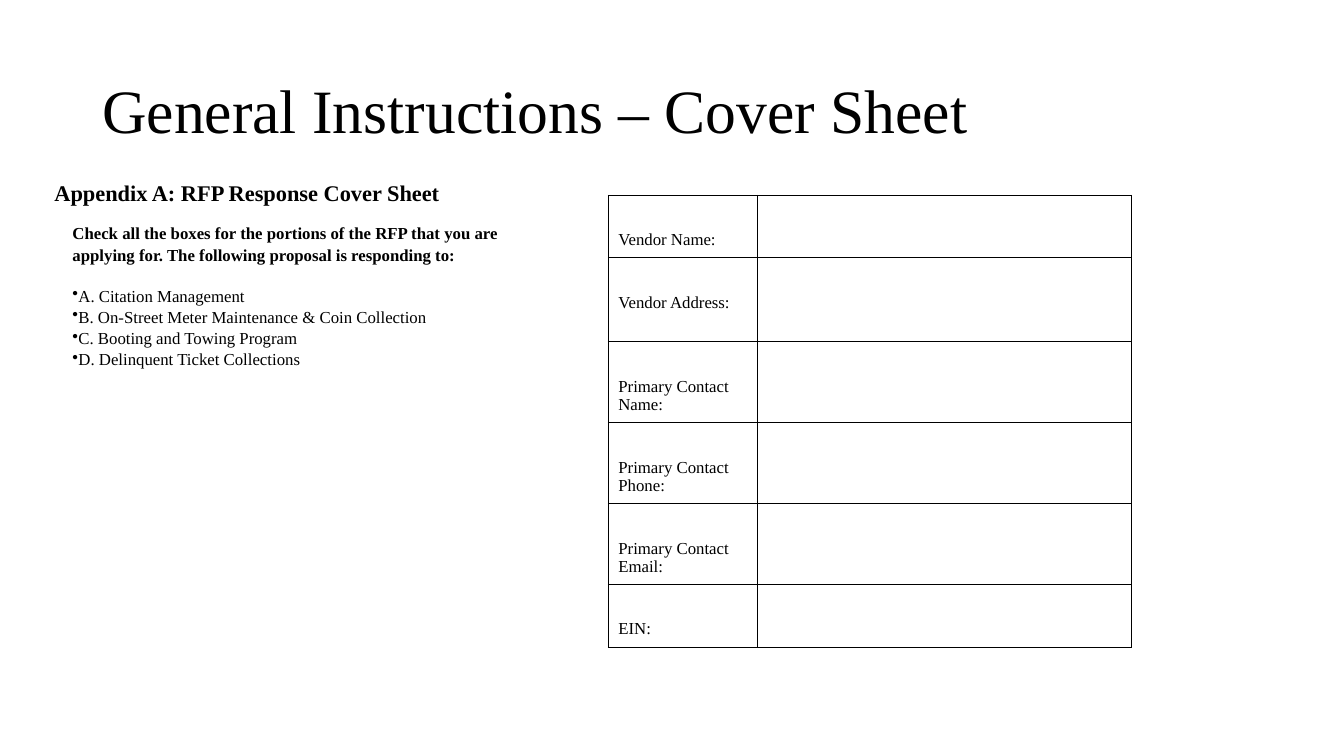
from dataclasses import dataclass

from lxml.etree import SubElement
from pptx import Presentation
from pptx.dml.color import RGBColor
from pptx.enum.shapes import MSO_SHAPE as Shape
from pptx.enum.text import MSO_ANCHOR as Anchor, PP_ALIGN as Align
from pptx.oxml.ns import qn
from pptx.util import Pt


@dataclass(frozen=True)
class Theme:
    font: str = "Times New Roman"
    ink: str = "000000"
    paper: str = "FFFFFF"
    title_size: float = 44
    heading_size: float = 16
    body_size: float = 12
    border_width: float = 0.6


THEME = Theme()
PROPOSAL_PARTS = [
    "A. Citation Management",
    "B. On-Street Meter Maintenance & Coin Collection",
    "C. Booting and Towing Program",
    "D. Delinquent Ticket Collections",
]
VENDOR_FIELDS = [
    ("Vendor Name:", 44.6),
    ("Vendor Address:", 60),
    ("Primary Contact Name:", 56),
    ("Primary Contact Phone:", 56),
    ("Primary Contact Email:", 56),
    ("EIN:", 44.9),
]


def style_paragraph(paragraph, text, size, bold=False):
    paragraph.text = text
    paragraph.alignment = Align.LEFT
    font = paragraph.font
    font.name, font.size, font.bold = THEME.font, Pt(size), bold
    font.color.rgb = RGBColor.from_string(THEME.ink)


def add_title(slide, left, top, width, height):
    box = slide.shapes.add_textbox(Pt(left), Pt(top), Pt(width), Pt(height))
    frame = box.text_frame
    frame.word_wrap = True
    frame.vertical_anchor = Anchor.MIDDLE
    paragraph = frame.paragraphs[0]
    style_paragraph(paragraph, "General Instructions – Cover Sheet", THEME.title_size)
    paragraph.line_spacing = 0.9


def add_panel(slide, left, top, width, height):
    panel = slide.shapes.add_shape(
        Shape.RECTANGLE, Pt(left), Pt(top), Pt(width), Pt(height))
    panel.shadow.inherit = False
    panel.fill.solid()
    panel.fill.fore_color.rgb = RGBColor.from_string(THEME.paper)
    panel.line.fill.background()
    frame = panel.text_frame
    frame.word_wrap = True
    frame.vertical_anchor = Anchor.TOP
    frame.margin_left = frame.margin_right = frame.margin_bottom = 0
    frame.margin_top = Pt(1)
    return frame


def add_heading(slide, left, top, width, height):
    frame = add_panel(slide, left, top, width, height)
    style_paragraph(frame.paragraphs[0], "Appendix A: RFP Response Cover Sheet",
                    THEME.heading_size, bold=True)


def add_instructions(slide, left, top, width, height):
    frame = add_panel(slide, left, top, width, height)
    introduction = frame.paragraphs[0]
    style_paragraph(
        introduction,
        "Check all the boxes for the portions of the RFP that you are applying for. "
        "The following proposal is responding to:",
        THEME.body_size, bold=True)
    introduction.line_spacing = 1.05
    introduction.space_after = Pt(14.4)
    for part in PROPOSAL_PARTS:
        paragraph = frame.add_paragraph()
        style_paragraph(paragraph, part, THEME.body_size)
        properties = paragraph._p.get_or_add_pPr()
        properties.set("marL", "0")
        properties.set("indent", "0")
        SubElement(properties, qn("a:buChar"), char="•")
        paragraph.line_spacing = 1.05


def style_cell(cell):
    properties = cell._tc.get_or_add_tcPr()
    for side in ("a:lnL", "a:lnR", "a:lnT", "a:lnB"):
        border = SubElement(properties, qn(side), w=str(Pt(THEME.border_width)))
        fill = SubElement(border, qn("a:solidFill"))
        SubElement(fill, qn("a:srgbClr"), val=THEME.ink)
    cell.fill.background()


def add_vendor_table(slide, left, top, label_width, entry_width):
    height = sum(row_height for _, row_height in VENDOR_FIELDS)
    table = slide.shapes.add_table(
        len(VENDOR_FIELDS), 2, Pt(left), Pt(top),
        Pt(label_width + entry_width), Pt(height)).table
    table.first_row = table.horz_banding = False
    table.columns[0].width = Pt(label_width)
    table.columns[1].width = Pt(entry_width)
    for row, (label, row_height) in zip(table.rows, VENDOR_FIELDS):
        row.height = Pt(row_height)
        for cell in row.cells:
            style_cell(cell)
        label_cell = row.cells[0]
        label_cell.margin_top = Pt(25.4)
        style_paragraph(label_cell.text_frame.paragraphs[0], label, THEME.body_size)


def build_cover_sheet_slide(presentation):
    slide = presentation.slides.add_slide(presentation.slide_layouts[6])
    add_title(slide, 66, 28.8, 828, 104.4)
    add_vendor_table(slide, 434.5, 139.4, 106.5, 267.5)
    add_heading(slide, 38.9, 126.7, 289.4, 51.1)
    add_instructions(slide, 51.8, 157.7, 340.6, 123.8)


def main():
    presentation = Presentation()
    presentation.slide_width = Pt(960)
    presentation.slide_height = Pt(540)
    build_cover_sheet_slide(presentation)
    presentation.save("out.pptx")


if __name__ == "__main__":
    main()
